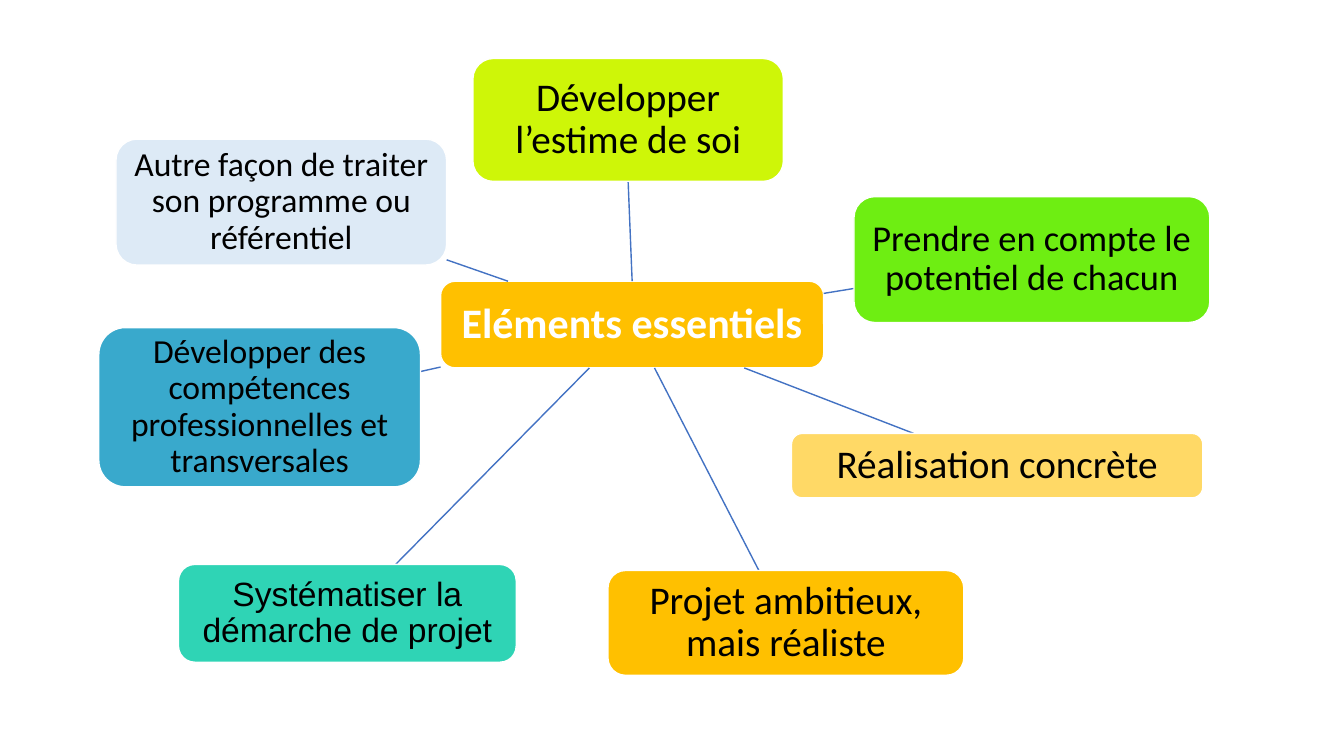
from lxml import etree
from pptx import Presentation
from pptx.dml.color import RGBColor
from pptx.enum.shapes import MSO_CONNECTOR, MSO_SHAPE
from pptx.enum.text import MSO_ANCHOR, PP_ALIGN
from pptx.oxml.ns import qn
from pptx.util import Inches, Pt

ROUNDED = MSO_SHAPE.ROUNDED_RECTANGLE
STRAIGHT = MSO_CONNECTOR.STRAIGHT
MIDDLE = MSO_ANCHOR.MIDDLE
CENTER = PP_ALIGN.CENTER
TOP, BOTTOM = 0, 2

HUB = (4.37, 2.79, 3.8, 0.86)
# place (left, top, width, height), fill, text, size, font
IDEAS = [
    ((4.69, 0.58, 3.08, 1.22), "CEF608", "Développer l’estime de soi", 28, "Calibri"),
    ((8.47, 1.95, 3.53, 1.25), "6EEE12",
     "Prendre en compte le potentiel de chacun", 26, "Calibri"),
    ((7.85, 4.3, 4.08, 0.64), "FFD966", "Réalisation concrète", 28, "Calibri"),
    ((6.03, 5.66, 3.53, 1.04), "FFC000", "Projet ambitieux, mais réaliste", 28, "Calibri"),
    ((1.77, 5.6, 3.35, 0.97), "2FD4B5", "Systématiser la démarche de projet", 24, "Arial"),
    ((0.98, 3.25, 3.19, 1.58), "39A9CC",
     "Développer des compétences professionnelles et transversales", 24, "Calibri"),
    ((1.15, 1.38, 3.28, 1.25), "DDEAF6",
     "Autre façon de traiter son programme ou référentiel", 24, "Calibri"),
]


def color(value):
    return RGBColor.from_string(value)


def center_of(place):
    left, top, width, height = place
    return left + width / 2, top + height / 2


def edge_toward(place, target):
    """Point where the ray from the centre of place to target leaves the box."""
    x, y = center_of(place)
    dx, dy = target[0] - x, target[1] - y
    share = 1 / max(abs(dx) / (place[2] / 2), abs(dy) / (place[3] / 2))
    return x + dx * share, y + dy * share


def add_box(page, place, text, *, fill, size, font="Calibri", ink="000000", bold=False):
    box = page.shapes.add_shape(ROUNDED, *map(Inches, place))
    box.shadow.inherit = False
    box.fill.solid()
    box.fill.fore_color.rgb = color(fill)
    box.line.color.rgb = color("FFFFFF")
    box.line.width = Pt(1)
    frame = box.text_frame
    frame.word_wrap = True
    frame.vertical_anchor = MIDDLE
    inset = Inches(0.08 if size >= 28 else 0.07)
    frame.margin_left = frame.margin_right = inset
    frame.margin_top = frame.margin_bottom = inset
    para = frame.paragraphs[0]
    para.alignment = CENTER
    para.line_spacing = 0.9
    span = para.add_run()
    span.text = text
    span.font.name = font
    span.font.size = Pt(size)
    span.font.bold = bold
    span.font.color.rgb = color(ink)
    return box


def add_spoke(page, start, end):
    spoke = page.shapes.add_connector(STRAIGHT, *map(Inches, (*start, *end)))
    spoke.line.color.rgb = color("4372C3")
    spoke.line.width = Pt(1)
    etree.SubElement(spoke._element.spPr, qn("a:effectLst"))
    return spoke


def main():
    deck = Presentation()
    deck.slide_width = Inches(13.33)
    deck.slide_height = Inches(7.5)
    page = deck.slides.add_slide(deck.slide_layouts[6])

    # Central topic
    hub = add_box(page, HUB, "Eléments essentiels", fill="FFC000", size=30,
                  ink="FFFFFF", bold=True)

    # Ideas around it, each on a line from centre to centre
    for index, (place, fill, text, size, font) in enumerate(IDEAS):
        spoke = add_spoke(page, edge_toward(HUB, center_of(place)),
                          edge_toward(place, center_of(HUB)))
        idea = add_box(page, place, text, fill=fill, size=size, font=font)
        if index == 0:  # the idea straight above joins side middles
            spoke.begin_connect(hub, TOP)
            spoke.end_connect(idea, BOTTOM)

    deck.save("out.pptx")


if __name__ == "__main__":
    main()
